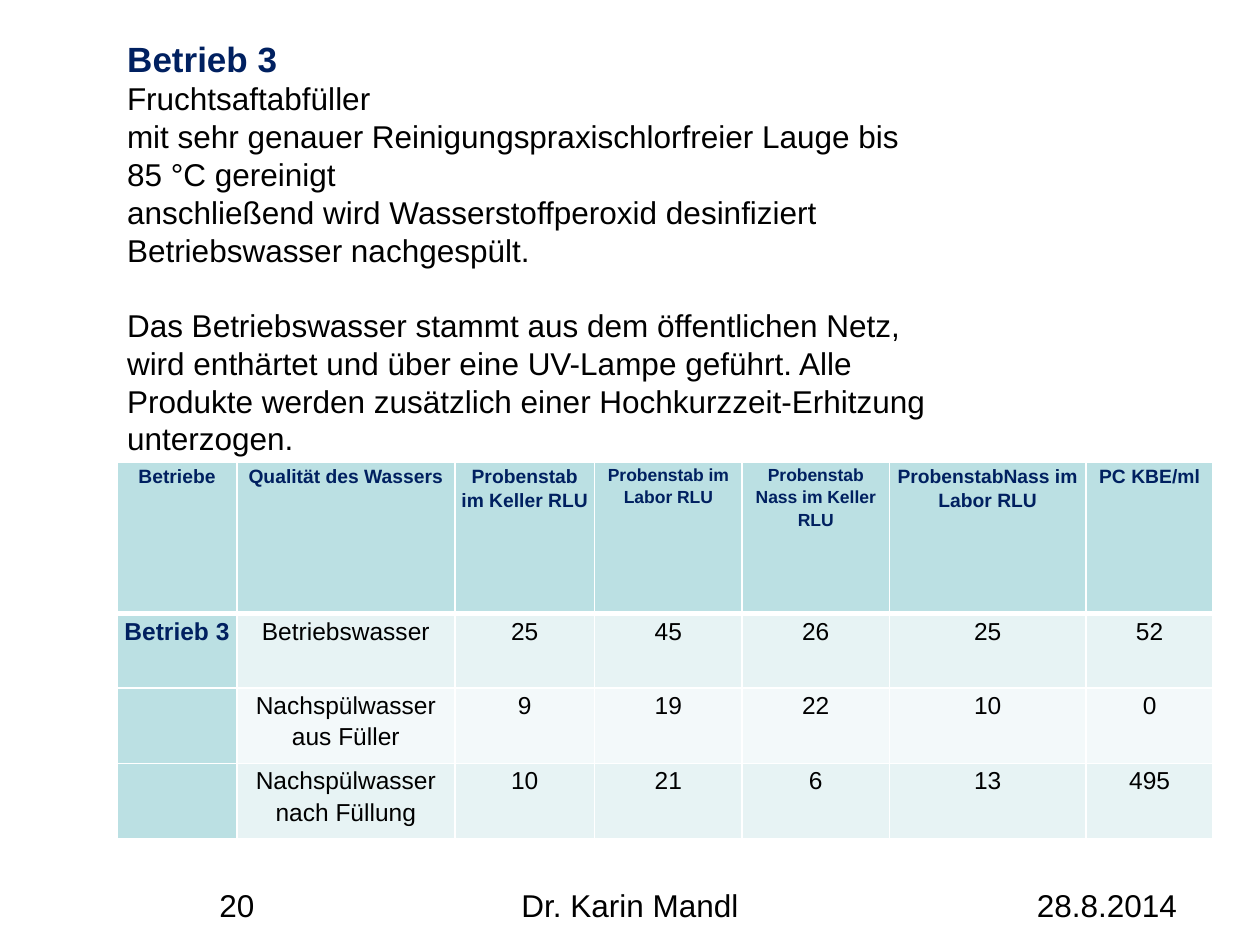
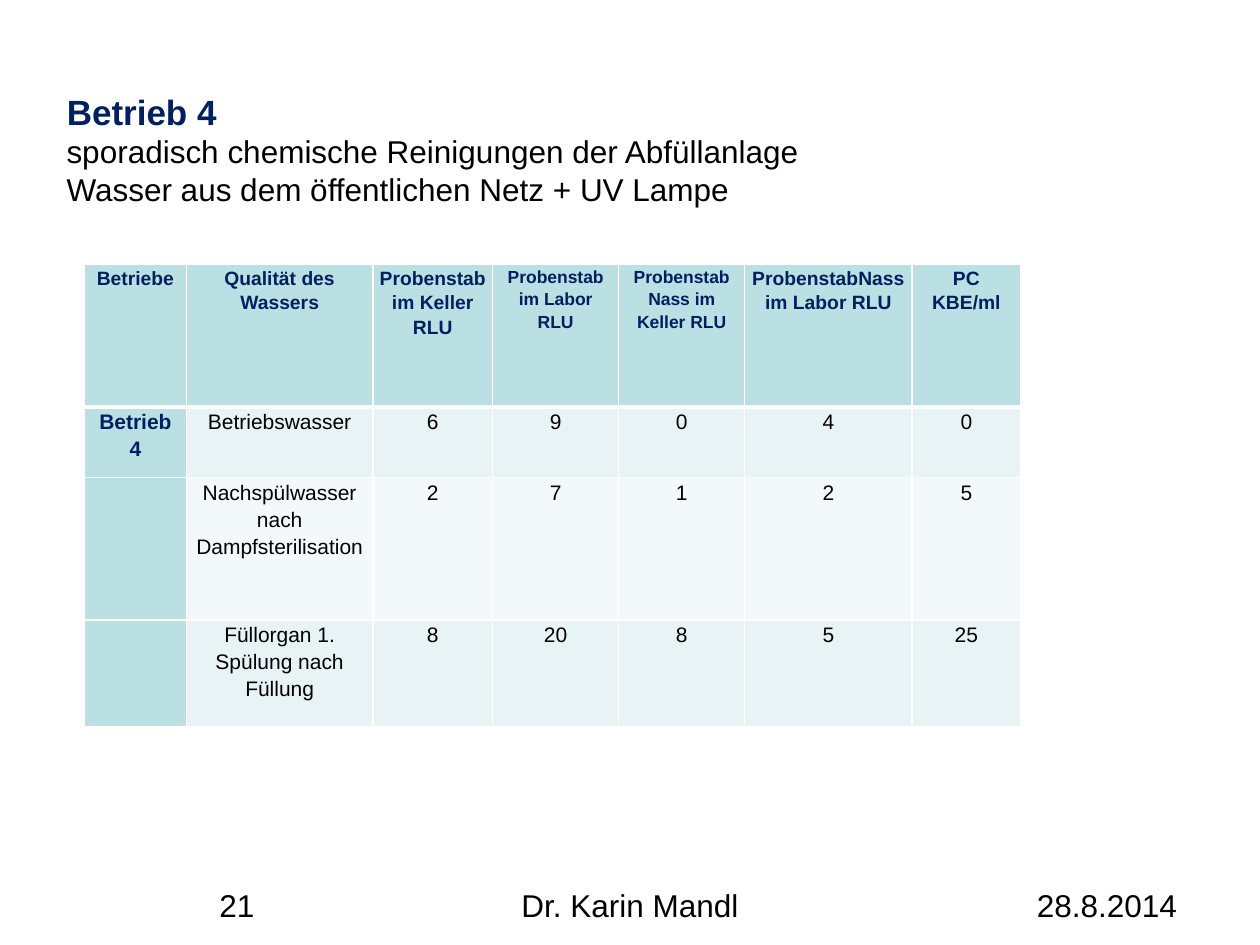
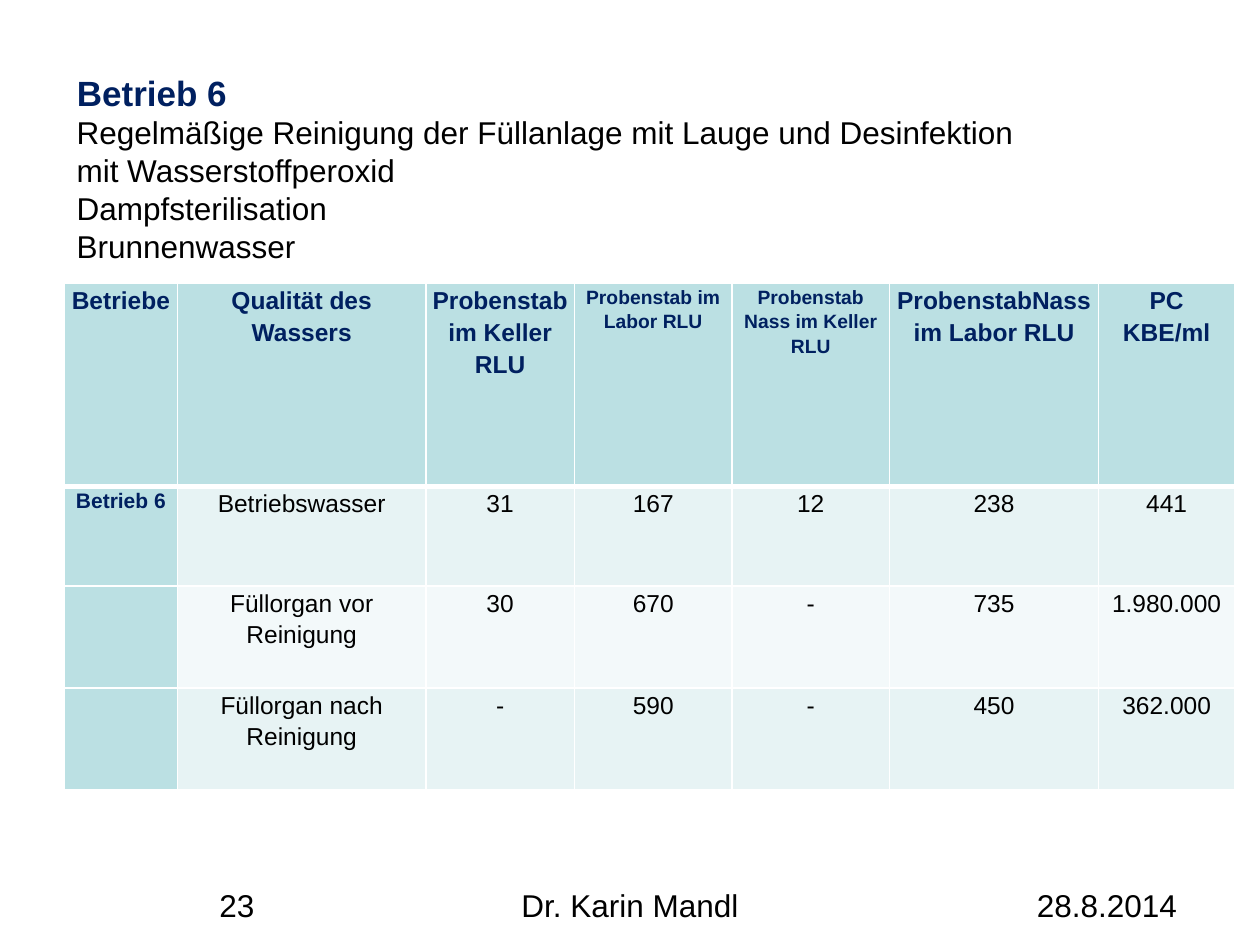
from lxml.etree import SubElement as Sub
from pptx import Presentation
from pptx.dml.color import RGBColor as Rgb
from pptx.enum.text import MSO_ANCHOR as Anchor, MSO_AUTO_SIZE as Auto, PP_ALIGN as Align
from pptx.oxml.ns import qn
from pptx.util import Inches, Pt

HUES = {"navy": "002060", "ink": "000000", "line": "FFFFFF",
        "head": "BBE0E3", "odd": "E7F3F4", "even": "F3F9FA"}
FONT = "Arial"
FOOT = {"top": 6.98, "high": 0.52, "size": 18}
HEAD_HIGH = 0.38
BODY = {"size": 18, "hue": "ink", "bold": False}
LABELS = ["Betriebe", "Qualität des Wassers", "Probenstab im Keller RLU",
          "Probenstab im Labor RLU", "Probenstab Nass im Keller RLU",
          "ProbenstabNass im Labor RLU", "PC KBE/ml"]
SMALL = (3, 4)

PLANTS = [
    {"page": "20", "name": "Betrieb 3", "spot": (0.91, 0.25, 6.59, 3.47),
     "text": ["Fruchtsaftabfüller",
              "mit sehr genauer Reinigungspraxischlorfreier Lauge bis 85 °C gereinigt",
              "anschließend wird Wasserstoffperoxid desinfiziert",
              "Betriebswasser nachgespült.",
              "Das Betriebswasser stammt aus dem öffentlichen Netz, wird enthärtet und "
              "über eine UV-Lampe geführt. Alle Produkte werden zusätzlich einer "
              "Hochkurzzeit-Erhitzung unterzogen."],
     "gaps": {4: 21.5},
     "grid": (0.93, 3.67), "cols": [0.95, 1.73, 1.11, 1.17, 1.17, 1.56, 1.01],
     "rows": [1.2, 0.59, 0.6, 0.6],
     "sizes": {"head": 11, "small": 10, "name": 14, "data": 14},
     "data": [["Betriebswasser", "25", "45", "26", "25", "52"],
              ["Nachspülwasser aus Füller", "9", "19", "22", "10", "0"],
              ["Nachspülwasser nach Füllung", "10", "21", "6", "13", "495"]]},
    {"page": "21", "name": "Betrieb 4", "spot": (0.43, 0.67, 9.13, 1.65),
     "text": ["sporadisch chemische Reinigungen der Abfüllanlage",
              "Wasser aus dem öffentlichen Netz + UV Lampe"],
     "gaps": {},
     "grid": (0.67, 2.1), "cols": [0.81, 1.48, 0.95, 1, 1, 1.33, 0.86],
     "rows": [1.13, 0.56, 1.13, 0.85],
     "sizes": {"head": 11, "small": 10, "name": 12, "data": 12},
     "data": [["Betriebswasser", "6", "9", "0", "4", "0"],
              ["Nachspülwasser nach Dampfsterilisation", "2", "7", "1", "2", "5"],
              ["Füllorgan 1. Spülung nach Füllung", "8", "20", "8", "5", "25"]]},
    {"page": "23", "name": "Betrieb 6", "spot": (0.51, 0.52, 7.87, 2.26),
     "text": ["Regelmäßige Reinigung der Füllanlage mit Lauge und Desinfektion "
              "mit Wasserstoffperoxid",
              "Dampfsterilisation", "Brunnenwasser"],
     "gaps": {},
     "grid": (0.51, 2.25), "cols": [0.9, 1.97, 1.18, 1.25, 1.25, 1.66, 1.08],
     "rows": [1.61, 0.79, 0.81, 0.81],
     "sizes": {"head": 14, "small": 11, "name": 12, "data": 14},
     "data": [["Betriebswasser", "31", "167", "12", "238", "441"],
              ["Füllorgan vor Reinigung", "30", "670", "-", "735", "1.980.000"],
              ["Füllorgan nach Reinigung", "-", "590", "-", "450", "362.000"]]},
]


def apply(thing, form):
    """Set each attribute named in the format dict."""
    for key, value in form.items():
        setattr(thing, key, value)


def style(para, size, hue, bold=False, **form):
    """Format one paragraph and its font."""
    apply(para, form)
    apply(para.font, {"name": FONT, "size": Pt(size), "bold": bold})
    para.font.color.rgb = Rgb.from_string(HUES[hue])


def add_title(slide, text, left, top, wide):
    """Place the heading in the title placeholder."""
    title = slide.shapes.title
    apply(title, {"left": Inches(left), "top": Inches(top),
                  "width": Inches(wide), "height": Inches(HEAD_HIGH)})
    frame = title.text_frame
    apply(frame, {"text": text, "word_wrap": True, "auto_size": Auto.NONE,
                  "vertical_anchor": Anchor.TOP, "margin_bottom": 0})
    style(frame.paragraphs[0], 20, "navy", True, alignment=Align.LEFT)


def add_text(slide, lines, spot, gaps=None, align=Align.LEFT, **form):
    """Add a wrapped text box with one paragraph per line."""
    frame = slide.shapes.add_textbox(*map(Inches, spot)).text_frame
    apply(frame, {"word_wrap": True, "text": "\n".join(lines), **form})
    for num, para in enumerate(frame.paragraphs):
        style(para, **BODY, alignment=align)
        if gaps and num in gaps:
            para.space_before = Pt(gaps[num])


def add_foot(slide, page):
    """Add page number, author and date along the bottom."""
    for text, left, wide in ((page, 1.46, 0.84), ("Dr. Karin Mandl", 2.56, 4.88),
                             ("28.8.2014", 7.84, 1.89)):
        add_text(slide, [text], (left, FOOT["top"], wide, FOOT["high"]),
                 align=Align.CENTER)


def add_edges(cell, base):
    """Draw white borders round a cell, given the top and bottom widths."""
    props = cell._tc.get_or_add_tcPr()
    for side, width in zip(("lnL", "lnR", "lnT", "lnB"), (1, 1, *base)):
        line = Sub(props, qn(f"a:{side}"), w=str(Pt(width)))
        fill = Sub(line, qn("a:solidFill"))
        Sub(fill, qn("a:srgbClr"), val=HUES["line"])


def cell_form(row, col, sizes):
    """Return fill name and font values for a place in the table."""
    if row == 0:
        kind = "small" if col in SMALL else "head"
    else:
        kind = "data" if col else "name"
    lead = kind != "data"
    fill = "head" if lead else ("even", "odd")[row % 2]
    return fill, {"size": sizes[kind], "hue": "navy" if lead else "ink", "bold": lead}


def add_grid(slide, plant):
    """Add the table of measured values."""
    names = [plant["name"]] + [""] * (len(plant["data"]) - 1)
    cells = [LABELS] + [[name, *vals] for name, vals in zip(names, plant["data"])]
    cols, rows = plant["cols"], plant["rows"]
    box = (*plant["grid"], sum(cols), sum(rows))
    table = slide.shapes.add_table(len(rows), len(cols), *map(Inches, box)).table
    apply(table, {"first_row": False, "horz_banding": False})
    for part, wide in zip(table.columns, cols):
        part.width = Inches(wide)
    for part, high in zip(table.rows, rows):
        part.height = Inches(high)
    for row, line in enumerate(cells):
        edges = (3 if row == 1 else 1, 3 if row == 0 else 1)
        for col, text in enumerate(line):
            cell = table.cell(row, col)
            fill, form = cell_form(row, col, plant["sizes"])
            apply(cell, {"text": text, "margin_left": Inches(0.05),
                         "margin_right": Inches(0.05),
                         "margin_top": 0, "margin_bottom": 0})
            add_edges(cell, edges)
            cell.fill.solid()
            cell.fill.fore_color.rgb = Rgb.from_string(HUES[fill])
            style(cell.text_frame.paragraphs[0], **form,
                  alignment=Align.CENTER, line_spacing=1.15)


def add_plant(deck, plant):
    """Build the slide of one plant."""
    slide = deck.slides.add_slide(deck.slide_layouts[5])
    left, top, wide, high = plant["spot"]
    add_foot(slide, plant["page"])
    add_title(slide, plant["name"], left, top, wide)
    add_text(slide, plant["text"], (left, top + HEAD_HIGH, wide, high - HEAD_HIGH),
             plant["gaps"], margin_top=0)
    add_grid(slide, plant)


def main():
    """Build and save the deck."""
    deck = Presentation()
    apply(deck, {"slide_width": Inches(10), "slide_height": Inches(7.5)})
    for plant in PLANTS:
        add_plant(deck, plant)
    deck.save("out.pptx")


if __name__ == "__main__":
    main()
